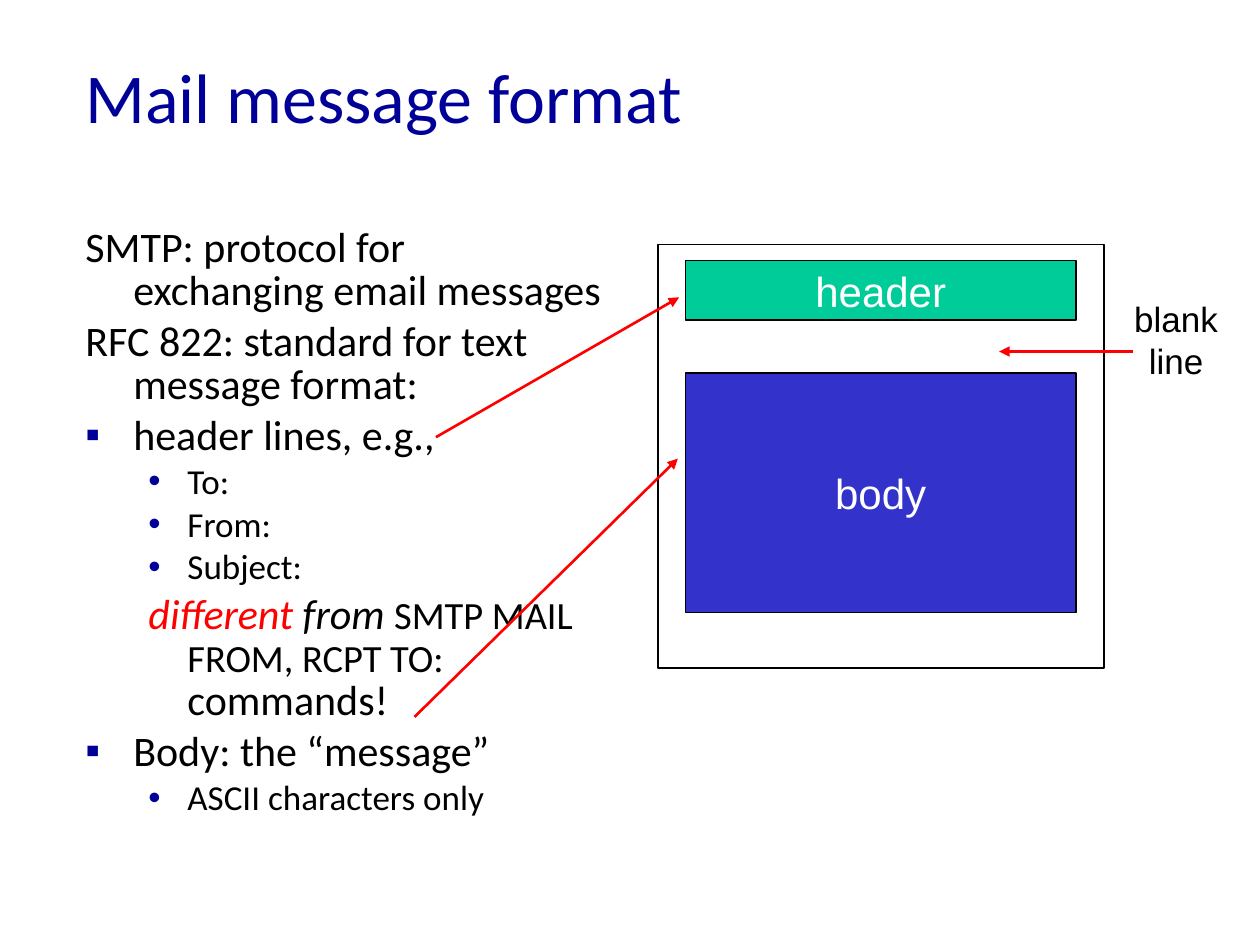
from pptx import Presentation
from pptx.dml.color import RGBColor
from pptx.enum.shapes import MSO_CONNECTOR as Connector, MSO_SHAPE as Shape
from pptx.enum.text import MSO_ANCHOR as Anchor, PP_ALIGN as Align
from pptx.oxml.ns import qn
from pptx.util import Inches, Pt
from lxml.etree import SubElement

NAVY, RED, BLACK, WHITE = "000099", "FF0000", "000000", "FFFFFF"
GREEN, BLUE = "00CC99", "3333CC"


def rgb(value):
    return RGBColor.from_string(value)


class MessageSlide:
    text_face, diagram_face = "Calibri", "Arial"
    # Per outline level: left margin, hanging indent, bullet sign
    levels = [(0.38, 0.38, "▪"), (0.81, 0.31, "•")]

    def __init__(self, prs):
        self.slide = prs.slides.add_slide(prs.slide_layouts[6])

    def style(self, font, face, size, color, italic=False):
        font.name, font.size, font.italic = face, Pt(size), italic
        font.color.rgb = rgb(color)

    def textbox(self, box, anchor=Anchor.TOP, wrap=True):
        frame = self.slide.shapes.add_textbox(*map(Inches, box)).text_frame
        frame.word_wrap, frame.vertical_anchor = wrap, anchor
        return frame

    def title(self, box, text):
        paragraph = self.textbox(box, Anchor.MIDDLE).paragraphs[0]
        paragraph.text = text
        self.style(paragraph.font, self.text_face, 40, NAVY)

    def outline(self, box, items):
        frame = self.textbox(box)
        for index, (level, bulleted, size, content) in enumerate(items):
            paragraph = frame.paragraphs[0] if index == 0 else frame.add_paragraph()
            paragraph.level, paragraph.line_spacing = level, 0.85
            if index:
                paragraph.space_before = Pt(size * 0.2)
            margin, hanging, sign = self.levels[level]
            props = paragraph._p.get_or_add_pPr()
            props.set("marL", str(Inches(margin)))
            props.set("indent", str(-Inches(hanging)))
            if bulleted:
                tint = SubElement(props, qn("a:buClr"))
                SubElement(tint, qn("a:srgbClr"), val=NAVY)
                SubElement(props, qn("a:buFont"), typeface="Arial")
                SubElement(props, qn("a:buChar"), char=sign)
            else:
                SubElement(props, qn("a:buNone"))
            if isinstance(content, str):
                paragraph.text = content
                self.style(paragraph.font, self.text_face, size, BLACK)
                continue
            for words, *look in content:
                run = paragraph.add_run()
                run.text = words
                self.style(run.font, self.text_face, *look)

    def block(self, box, fill=None, text="", weight=0.75):
        block = self.slide.shapes.add_shape(Shape.RECTANGLE, *map(Inches, box))
        block.shadow.inherit = False
        block.line.color.rgb, block.line.width = rgb(BLACK), Pt(weight)
        if fill is None:
            block.fill.background()
            return
        block.fill.solid()
        block.fill.fore_color.rgb = rgb(fill)
        frame = block.text_frame
        frame.word_wrap, frame.vertical_anchor = False, Anchor.MIDDLE
        self.label(frame.paragraphs[0], text, 24, WHITE)

    def label(self, paragraph, text, size, color):
        paragraph.text, paragraph.alignment = text, Align.CENTER
        self.style(paragraph.font, self.diagram_face, size, color)

    def caption(self, box, lines):
        frame = self.textbox(box, wrap=False)
        for index, line in enumerate(lines):
            paragraph = frame.add_paragraph() if index else frame.paragraphs[0]
            self.label(paragraph, line, 20, BLACK)

    def arrow(self, start, end):
        arrow = self.slide.shapes.add_connector(
            Connector.STRAIGHT, *map(Inches, start + end))
        arrow.line.color.rgb, arrow.line.width = rgb(RED), Pt(1.5)
        SubElement(arrow.line._get_or_add_ln(), qn("a:tailEnd"), type="triangle")
        SubElement(arrow._element.spPr, qn("a:effectLst"))


def main():
    prs = Presentation()
    prs.slide_width, prs.slide_height = Inches(10), Inches(7.5)
    page = MessageSlide(prs)

    # Title and outline: level, bulleted, size, text or styled runs
    page.title((0.58, 0.13, 8.5, 1.25), "Mail message format")
    page.outline((0.58, 1.76, 4.3, 5.08), [
        (0, False, 24, "SMTP: protocol for exchanging email messages"),
        (0, False, 24, "RFC 822: standard for text message format:"),
        (0, True, 24, "header lines, e.g.,"),
        (1, True, 20, "To:"),
        (1, True, 20, "From:"),
        (1, True, 20, "Subject:"),
        (1, False, 24, [("different ", 24, RED, True),
                        ("from ", 24, BLACK, True),
                        ("SMTP MAIL FROM, RCPT TO:", 22, BLACK),
                        (" commands!", 24, BLACK)]),
        (0, True, 24, "Body: the “message”"),
        (1, True, 20, "ASCII characters only"),
    ])

    # Message layout
    page.block((5.44, 2.07, 3.1, 0.47), GREEN, "header")
    page.block((5.44, 2.96, 3.1, 1.9), BLUE, "body")
    page.block((5.22, 1.94, 3.54, 3.36), weight=1)

    # Pointers to the message parts
    page.arrow((3.46, 3.47), (5.39, 2.36))
    page.arrow((3.29, 5.69), (5.38, 3.64))
    page.caption((8.9, 2.31, 0.87, 0.77), ["blank", "line"])
    page.arrow((8.99, 2.79), (7.93, 2.79))

    prs.save("out.pptx")


if __name__ == "__main__":
    main()
